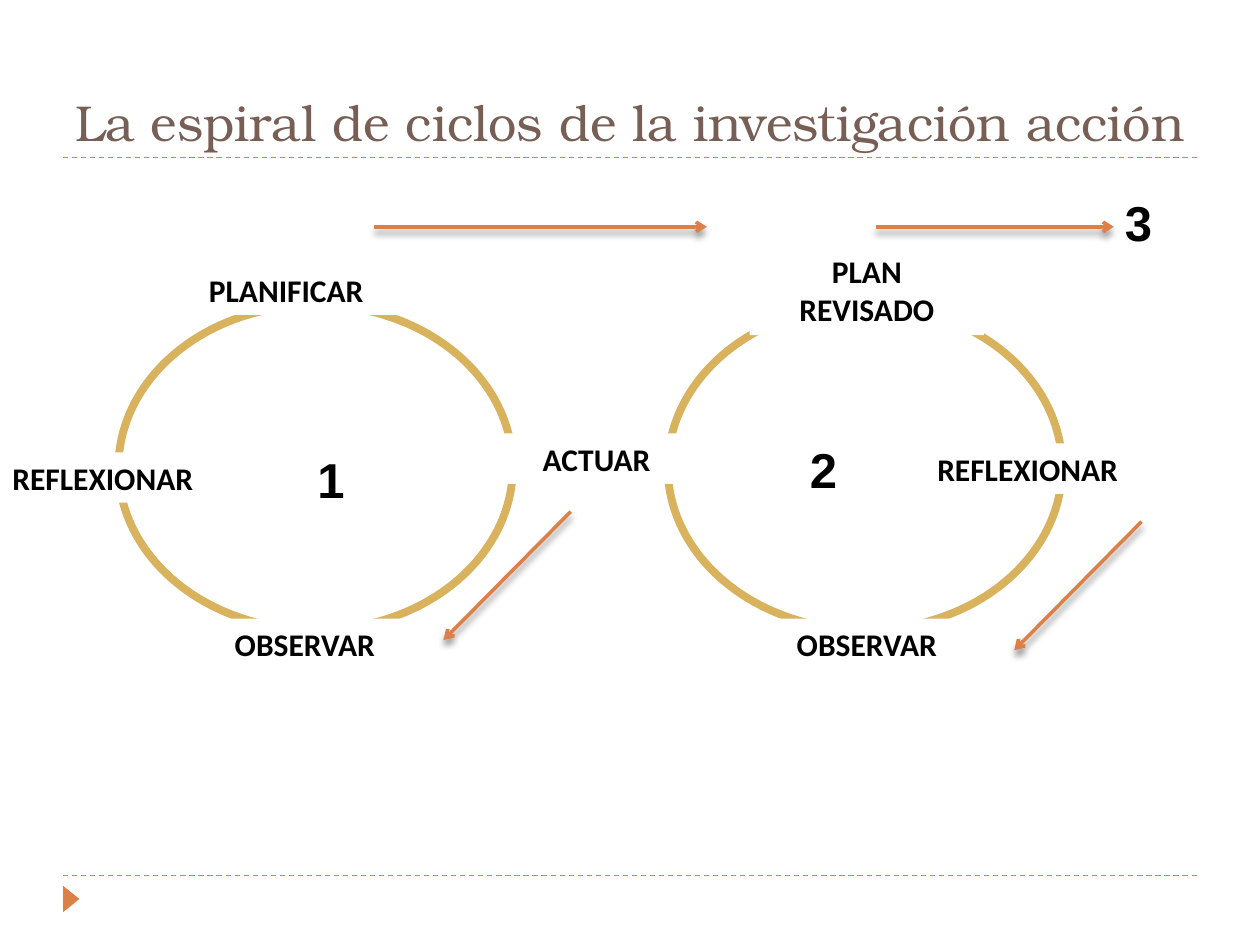
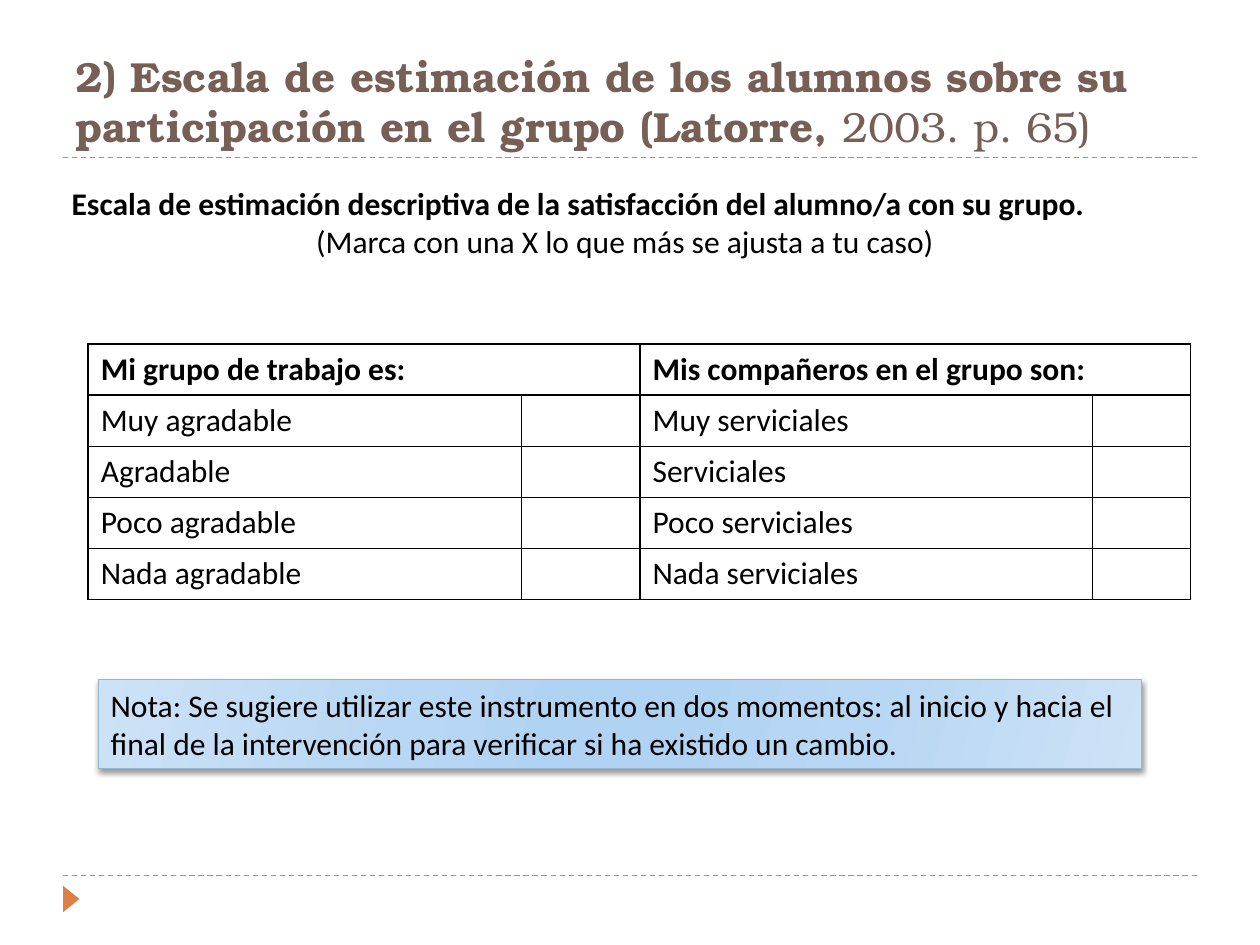
from dataclasses import dataclass

from lxml import etree
from pptx import Presentation
from pptx.dml.color import RGBColor
from pptx.enum import dml, shapes, text
from pptx.oxml import parse_xml
from pptx.oxml.ns import nsdecls, qn
from pptx.util import Inches, Pt

ORANGE = RGBColor(0xDD, 0x80, 0x47)
BROWN = RGBColor(0x77, 0x5F, 0x55)
GOLD = RGBColor(0xD8, 0xB2, 0x5C)
BLUE = RGBColor(0x94, 0xB6, 0xD2)
BLACK = RGBColor(0, 0, 0)
WHITE = RGBColor(0xFF, 0xFF, 0xFF)
NOTE_STOPS = ((0, "CDE2F6"), (30, "B8D7F4"), (45, "B1D3F3"),
              (55, "B1D3F3"), (73, "B8D7F4"), (100, "CDE2F6"))
TITLE_FONT, BODY_FONT, NUMBER_FONT = "TeX Gyre Bonum", "Calibri", "Arial"
LEFT, CENTER, JUSTIFY = text.PP_ALIGN.LEFT, text.PP_ALIGN.CENTER, text.PP_ALIGN.JUSTIFY


@dataclass
class Box:
    left: float
    top: float
    width: float
    height: float

    def lengths(self):
        return [Inches(v) for v in (self.left, self.top, self.width, self.height)]


@dataclass
class Label:
    words: str
    box: Box
    align: text.PP_ALIGN = CENTER


@dataclass
class Arrow:
    start: tuple[float, float]
    end: tuple[float, float]


@dataclass
class Cycle:
    number: str
    number_at: tuple[float, float]
    ring: Box
    labels: list[Label]


CYCLES = [
    Cycle("1", (2.42, 3.52), Box(0.94, 2.42, 3.13, 2.58), [
        Label("PLANIFICAR", Box(1.56, 2.1, 1.88, 0.4), LEFT),
        Label("OBSERVAR", Box(1.48, 4.91, 1.88, 0.4)),
        Label("REFLEXIONAR", Box(0, 3.59, 2.19, 0.4), LEFT)]),
    Cycle("2", (6.33, 3.44), Box(5.3, 2.42, 3.13, 2.58), [
        Label("PLAN REVISADO", Box(5.95, 1.95, 1.86, 0.71)),
        Label("OBSERVAR", Box(5.94, 4.91, 1.88, 0.4)),
        Label("REFLEXIONAR", Box(7.34, 3.52, 2.19, 0.4), LEFT)]),
]
SHARED_LABEL = Label("ACTUAR", Box(3.83, 3.44, 1.81, 0.4))
NEXT_CYCLE = ("3", (8.83, 1.48))
ARROWS = [Arrow((2.97, 1.8), (5.61, 1.8)), Arrow((6.95, 1.8), (8.84, 1.8)),
          Arrow((4.53, 4.06), (3.52, 5.08)), Arrow((9.06, 4.14), (8.05, 5.16))]

SCALE_COLS = (3.44, 0.94, 3.59, 0.78)
SCALE_ROWS = [
    ("Mi grupo de trabajo es:", "Mis compañeros en el grupo son:"),
    ("Muy agradable", "Muy serviciales"),
    ("Agradable", "Serviciales"),
    ("Poco agradable", "Poco serviciales"),
    ("Nada agradable", "Nada serviciales"),
]


def style(p, size: float, font: str = BODY_FONT, color: RGBColor = BLACK,
          bold: bool = False, align: text.PP_ALIGN = LEFT) -> None:
    p.alignment = align
    p.font.size, p.font.name, p.font.bold = Pt(size), font, bold
    p.font.color.rgb = color


def add_text(s, box: Box):
    tf = s.shapes.add_textbox(*box.lengths()).text_frame
    tf.word_wrap = True
    return tf


def add_plain_shape(s, kind, box: Box, fill: RGBColor | None):
    sp = s.shapes.add_shape(kind, *box.lengths())
    sp.shadow.inherit = False
    sp.line.fill.background()
    if fill is not None:
        sp.fill.solid()
        sp.fill.fore_color.rgb = fill
    return sp


def add_line(s, start: tuple[float, float], end: tuple[float, float], width: float):
    ln = s.shapes.add_connector(shapes.MSO_CONNECTOR.STRAIGHT,
                                *[Inches(v) for v in (*start, *end)])
    ln.line.color.rgb = ORANGE
    ln.line.width = Pt(width)
    etree.SubElement(ln._element.spPr, qn("a:effectLst"))
    return ln


def add_shadow(sp, blur: float, distance: float) -> None:
    """Fill the shape's empty effect list with a soft shadow straight below."""
    sp._element.spPr.find(qn("a:effectLst")).append(parse_xml(
        f'<a:outerShdw {nsdecls("a")} blurRad="{Pt(blur)}" dist="{Pt(distance)}" '
        'dir="5400000" rotWithShape="0"><a:srgbClr val="000000">'
        '<a:alpha val="40000"/></a:srgbClr></a:outerShdw>'))


def add_arrow(s, arrow: Arrow) -> None:
    ln = add_line(s, arrow.start, arrow.end, 2)
    etree.SubElement(ln.line._get_or_add_ln(), qn("a:tailEnd"), type="arrow")
    add_shadow(ln, 4, 3.4)


def add_label(s, label: Label) -> None:
    sp = add_plain_shape(s, shapes.MSO_SHAPE.RECTANGLE, label.box, WHITE)
    tf = sp.text_frame
    tf.vertical_anchor = text.MSO_ANCHOR.TOP
    tf.text = label.words
    style(tf.paragraphs[0], 18, bold=True, align=label.align)


def add_number(s, number: str, at: tuple[float, float]) -> None:
    p = add_text(s, Box(*at, 0.78, 0.57)).paragraphs[0]
    p.text = number
    style(p, 28, NUMBER_FONT, bold=True)


def add_ring(s, box: Box) -> None:
    sp = add_plain_shape(s, shapes.MSO_SHAPE.OVAL, box, WHITE)
    sp.line.color.rgb = GOLD
    sp.line.width = Pt(4.5)


def add_slide(prs, size: float, title: str, plain_end: str = "", bold: bool = False):
    """Add a slide with the dashed rules, corner marker and title."""
    s = prs.slides.add_slide(prs.slide_layouts[6])
    for y in (6.95, 1.25):
        add_line(s, (0.5, y), (9.5, y), 0.75).line.dash_style = dml.MSO_LINE.DASH
    marker = add_plain_shape(s, shapes.MSO_SHAPE.ISOSCELES_TRIANGLE,
                             Box(0.46, 7.07, 0.21, 0.13), ORANGE)
    marker.rotation = 90
    tf = add_text(s, Box(0.5, 0.25, 9, 1))
    tf.vertical_anchor = text.MSO_ANCHOR.BOTTOM
    p = tf.paragraphs[0]
    p.text = title
    style(p, size, TITLE_FONT, BROWN, bold)
    if plain_end:
        r = p.add_run()
        r.text = plain_end
        r.font.bold = False
    return s


def add_borders(cell) -> None:
    for side in ("lnL", "lnR", "lnT", "lnB"):
        cell._tc.get_or_add_tcPr().append(parse_xml(
            f'<a:{side} {nsdecls("a")} w="{Pt(1)}"><a:solidFill>'
            f'<a:srgbClr val="{BLACK}"/></a:solidFill></a:{side}>'))


def add_scale_table(s) -> None:
    height = 0.406
    box = Box(0.7, 2.73, sum(SCALE_COLS), height * len(SCALE_ROWS))
    table = s.shapes.add_table(len(SCALE_ROWS), len(SCALE_COLS), *box.lengths()).table
    table.first_row = table.horz_banding = False
    for col, width in zip(table.columns, SCALE_COLS):
        col.width = Inches(width)
    for i, answers in enumerate(SCALE_ROWS):
        table.rows[i].height = Inches(height)
        for j in range(len(SCALE_COLS)):
            cell = table.cell(i, j)
            add_borders(cell)
            cell.fill.solid()
            cell.fill.fore_color.rgb = WHITE
            if j % 2 == 0:
                cell.text = answers[j // 2]
            style(cell.text_frame.paragraphs[0], 18, bold=i == 0)
    for j in (0, 2):
        table.cell(0, j).merge(table.cell(0, j + 1))


def add_note(s, words: str) -> None:
    sp = add_plain_shape(s, shapes.MSO_SHAPE.RECTANGLE, Box(0.78, 5.39, 8.28, 0.71), None)
    stops = "".join(f'<a:gs pos="{pos * 1000}"><a:srgbClr val="{color}"/></a:gs>'
                    for pos, color in NOTE_STOPS)
    sp._element.spPr.find(qn("a:prstGeom")).addnext(parse_xml(
        f'<a:gradFill {nsdecls("a")} rotWithShape="1"><a:gsLst>{stops}</a:gsLst>'
        f'<a:lin ang="{16 * 60000}" scaled="0"/></a:gradFill>'))
    sp.line.color.rgb = BLUE
    sp.line.width = Pt(0.75)
    add_shadow(sp, 3, 2)
    sp.text_frame.text = words
    style(sp.text_frame.paragraphs[0], 18)


def build_spiral_slide(prs) -> None:
    s = add_slide(prs, 28.8, "La espiral de ciclos de la investigación acción")
    for cycle in CYCLES:
        add_ring(s, cycle.ring)
        for label in cycle.labels:
            add_label(s, label)
    add_label(s, SHARED_LABEL)
    for arrow in ARROWS:
        add_arrow(s, arrow)
    for cycle in CYCLES:
        add_number(s, cycle.number, cycle.number_at)
    add_number(s, *NEXT_CYCLE)


def build_scale_slide(prs) -> None:
    s = add_slide(prs, 24, "2) Escala de estimación de los alumnos sobre su "
                  "participación en el grupo (Latorre, ", "2003. p. 65)", bold=True)
    tf = add_text(s, Box(0.47, 1.41, 8.98, 1.01))
    heading, hint = tf.paragraphs[0], tf.add_paragraph()
    heading.text = ("Escala de estimación descriptiva de la satisfacción "
                    "del alumno/a con su grupo.")
    style(heading, 18, bold=True, align=JUSTIFY)
    hint.text = "(Marca con una X lo que más se ajusta a tu caso)"
    style(hint, 18, align=CENTER)
    add_scale_table(s)
    add_note(s, "Nota: Se sugiere utilizar este instrumento en dos momentos: al inicio y "
             "hacia el final de la intervención para verificar si ha existido un cambio.")


def main() -> None:
    prs = Presentation()
    prs.slide_width, prs.slide_height = Inches(10), Inches(7.5)
    build_spiral_slide(prs)
    build_scale_slide(prs)
    prs.save("out.pptx")


if __name__ == "__main__":
    main()
